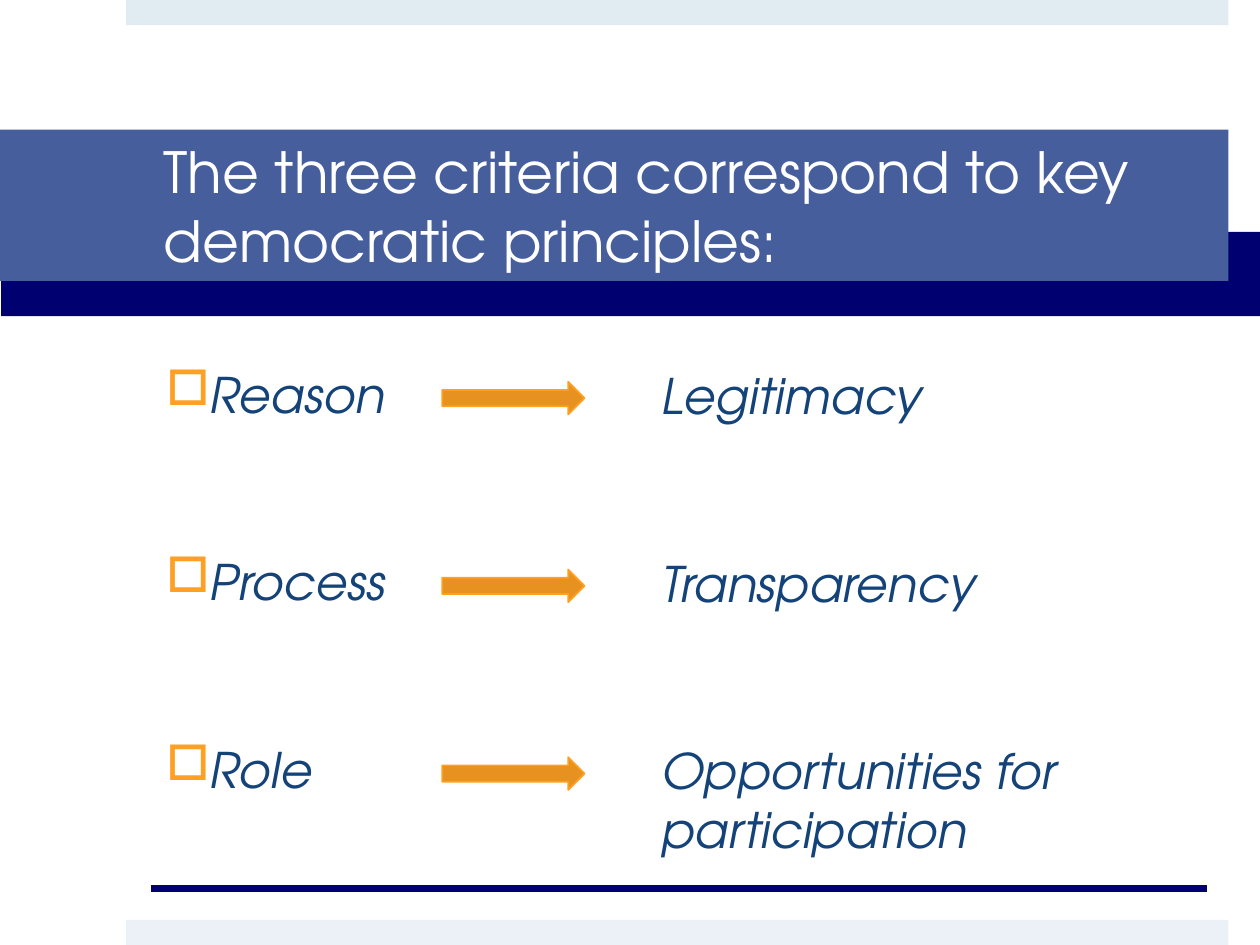
from dataclasses import dataclass

from lxml.etree import SubElement
from pptx import Presentation
from pptx.dml.color import RGBColor
from pptx.enum.shapes import MSO_CONNECTOR, MSO_SHAPE
from pptx.enum.text import MSO_ANCHOR, PP_ALIGN
from pptx.oxml.ns import qn
from pptx.util import Inches, Pt


@dataclass(frozen=True)
class Theme:
    font: str = "TeX Gyre Adventor"
    title_size: float = 32.4
    body_size: float = 28
    row_gap: float = 73.7
    rule_width: float = 4.31
    top_strip: str = "E0EBF2"
    bottom_strip: str = "EBF1F7"
    navy: str = "000070"
    title_band: str = "465E9C"
    title_text: str = "FFFFFF"
    body_text: str = "144379"
    bullet: str = "FDA023"
    arrow: str = "E69120"
    arrow_edge: str = "FFA021"


def apply_format(target, values):
    for name, value in values.items():
        setattr(target, name, value)


class SlideBuilder:
    def __init__(self, slide, theme):
        self.slide = slide
        self.theme = theme

    def block(self, box, fill, preset=MSO_SHAPE.RECTANGLE, edge=None):
        block = self.slide.shapes.add_shape(preset, *map(Inches, box))
        block.shadow.inherit = False
        block.fill.solid()
        block.fill.fore_color.rgb = RGBColor.from_string(fill)
        if edge:
            block.line.color.rgb = RGBColor.from_string(edge)
            block.line.width = Pt(1)
        else:
            block.line.fill.background()
        return block

    def wording(self, paragraph, text, size, color, italic=False):
        paragraph.alignment = PP_ALIGN.LEFT
        run = paragraph.add_run()
        run.text = text
        apply_format(run.font, {"name": self.theme.font, "size": Pt(size), "italic": italic})
        run.font.color.rgb = RGBColor.from_string(color)

    def title(self, box, text):
        frame = self.block(box, self.theme.title_band).text_frame
        apply_format(frame, {
            "word_wrap": True,
            "vertical_anchor": MSO_ANCHOR.MIDDLE,
            "margin_left": Inches(1.3),
            "margin_right": Inches(0.3),
            "margin_top": Inches(0.05),
            "margin_bottom": Inches(0.05),
        })
        self.wording(frame.paragraphs[0], text, self.theme.title_size, self.theme.title_text)

    def bullet(self, paragraph, symbol):
        properties = paragraph._p.get_or_add_pPr()
        properties.set("marL", "0")
        properties.set("indent", "0")
        color = SubElement(properties, qn("a:buClr"))
        SubElement(color, qn("a:srgbClr"), val=self.theme.bullet)
        SubElement(properties, qn("a:buChar"), char=symbol)

    def column(self, box, entries, symbol=None):
        frame = self.slide.shapes.add_textbox(*map(Inches, box)).text_frame
        frame.word_wrap = True
        for index, entry in enumerate(entries):
            paragraph = frame.add_paragraph() if index else frame.paragraphs[0]
            if index:
                paragraph.space_before = Pt(self.theme.row_gap)
            self.wording(paragraph, entry, self.theme.body_size, self.theme.body_text, italic=True)
            if symbol:
                self.bullet(paragraph, symbol)

    def rule(self, left, right, top):
        rule = self.slide.shapes.add_connector(
            MSO_CONNECTOR.STRAIGHT, Inches(left), Inches(top), Inches(right), Inches(top))
        rule.line.color.rgb = RGBColor.from_string(self.theme.navy)
        rule.line.width = Pt(self.theme.rule_width)
        SubElement(rule._element.spPr, qn("a:effectLst"))


def main():
    deck = Presentation()
    apply_format(deck, {"slide_width": Inches(10), "slide_height": Inches(7.5)})
    theme = Theme()
    builder = SlideBuilder(deck.slides.add_slide(deck.slide_layouts[6]), theme)

    # Background strips and title band
    builder.block((1, 0, 8.75, 0.2), theme.top_strip)
    builder.block((1, 7.3, 8.75, 0.2), theme.bottom_strip)
    builder.block((0.01, 1.84, 9.99, 0.67), theme.navy)
    builder.title((0, 1.03, 9.75, 1.2),
                  "The three criteria correspond to key democratic principles:")

    # Criteria, each with an arrow to its principle
    principles = {
        "Reason": "Legitimacy",
        "Process": "Transparency",
        "Role": "Opportunities for participation",
    }
    builder.column((1.22, 2.84, 8.32, 4.01), principles.keys(), symbol="□")
    for row in range(len(principles)):
        builder.block((3.51, 3.03 + 1.49 * row, 1.13, 0.26), theme.arrow,
                      MSO_SHAPE.RIGHT_ARROW, theme.arrow_edge)
    builder.column((5.15, 2.85, 3.83, 4.25), principles.values())

    # Closing rule
    builder.rule(1.2, 9.58, 7.05)

    deck.save("out.pptx")


if __name__ == "__main__":
    main()
